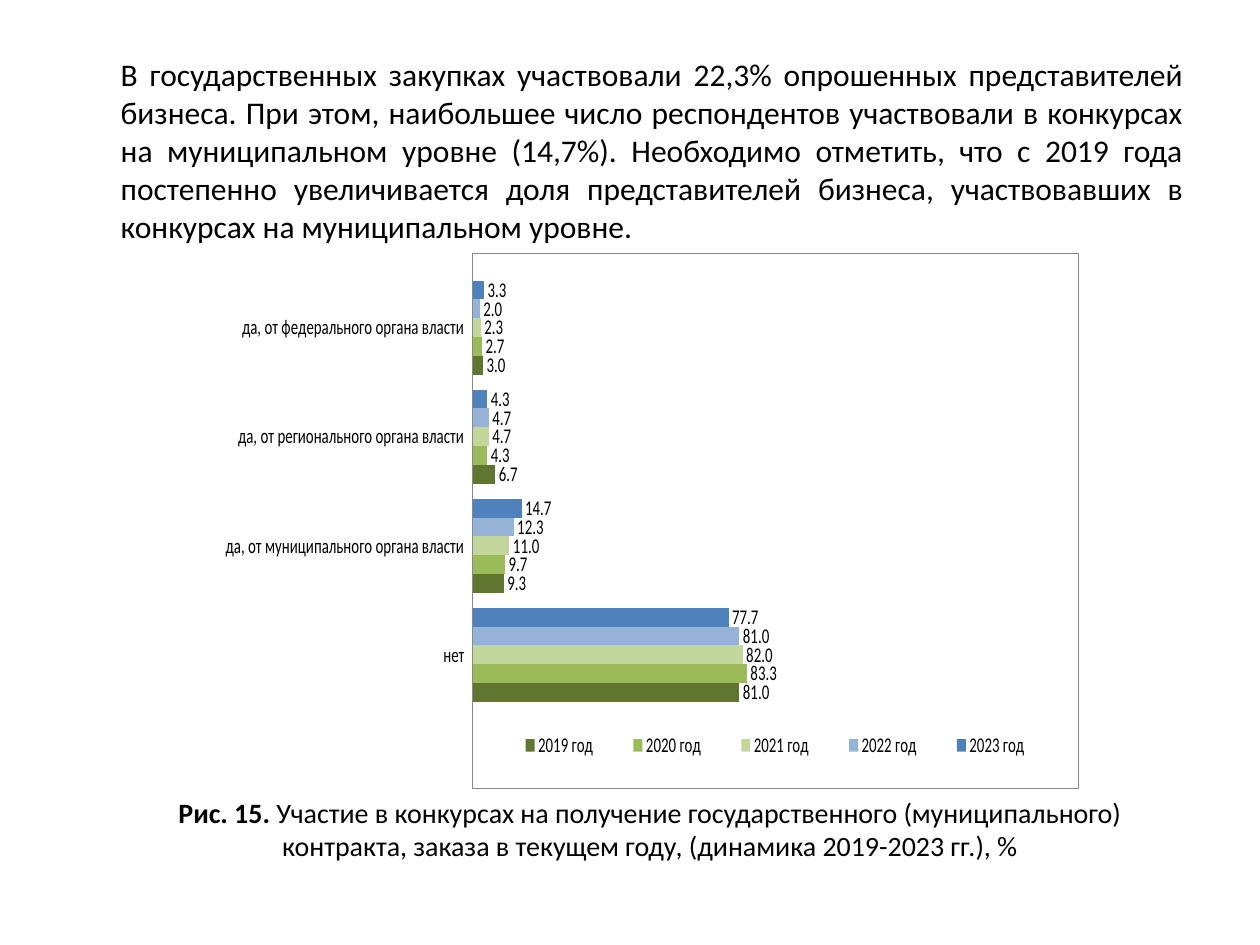
from typing import NamedTuple

from lxml.etree import Element, SubElement
from pptx import Presentation
from pptx.chart.data import CategoryChartData as Data
from pptx.dml.color import RGBColor as RGB
from pptx.enum.chart import XL_CHART_TYPE as Kind
from pptx.enum.chart import XL_LABEL_POSITION as Spot
from pptx.enum.chart import XL_LEGEND_POSITION as Side
from pptx.enum.chart import XL_TICK_MARK as Tick
from pptx.enum.text import MSO_ANCHOR as Anchor
from pptx.enum.text import MSO_AUTO_SIZE as Fit
from pptx.enum.text import PP_ALIGN as Align
from pptx.oxml import parse_xml
from pptx.oxml.ns import nsdecls, qn
from pptx.util import Pt

PX = 9144  # 100 px to the inch
FACE = "Calibri"
BLACK = "000000"


class Box(NamedTuple):
    x: int
    y: int
    w: int
    h: int

    def emu(self) -> list[int]:
        return [n * PX for n in self]


class Year(NamedTuple):
    name: str
    color: str
    vals: tuple


class Run(NamedTuple):
    text: str
    bold: bool = False


CATS = ("да, от федерального органа власти", "да, от регионального органа власти",
        "да, от муниципального органа власти", "нет")
YEARS = (
    Year("2023 год", "4F81BD", (3.3, 4.3, 14.7, 77.7)),
    Year("2022 год", "95B3D7", (2, 4.7, 12.3, 81)),
    Year("2021 год", "C3D69B", (2.3, 4.7, 11, 82)),
    Year("2020 год", "9BBB59", (2.7, 4.3, 9.7, 83.3)),
    Year("2019 год", "5F7530", (3, 6.7, 9.3, 81)),
)
INTRO = (Run(
    "В государственных закупках участвовали 22,3% опрошенных представителей бизнеса. "
    "При этом, наибольшее число респондентов участвовали в конкурсах на муниципальном "
    "уровне (14,7%). Необходимо отметить, что с 2019 года постепенно увеличивается доля "
    "представителей бизнеса, участвовавших в конкурсах на муниципальном уровне."),)
NOTE = (
    Run("Рис. 15. ", True),
    Run("Участие в конкурсах на получение государственного (муниципального) контракта, "
        "заказа в текущем году, (динамика 2019-2023 гг.), %"),
)


def rgb(code: str) -> RGB:
    return RGB.from_string(code)


def style(font, size: int) -> None:
    font.name, font.size = FACE, Pt(size)
    font.color.rgb = rgb(BLACK)


def add_text(slide, box: Box, runs: tuple, size: int, align, anchor) -> None:
    frame = slide.shapes.add_textbox(*box.emu()).text_frame
    frame.word_wrap = True
    frame.auto_size = Fit.SHAPE_TO_FIT_TEXT
    frame.vertical_anchor = anchor
    para = frame.paragraphs[0]
    para.alignment = align
    style(para.font, size)
    for item in runs:
        run = para.add_run()
        run.text = item.text
        if item.bold:
            run.font.bold = True


def layout(x: float, y: float, w: float, h: float, inner: bool = False):
    """Manual layout, as fractions of the chart."""
    root = Element(qn("c:layout"))
    part = SubElement(root, qn("c:manualLayout"))
    rows = [("layoutTarget", "inner")] if inner else []
    rows += [("xMode", "edge"), ("yMode", "edge"),
             ("x", x), ("y", y), ("w", w), ("h", h)]
    for tag, val in rows:
        SubElement(part, qn(f"c:{tag}")).set("val", str(val))
    return root


def add_bars(slide, box: Box) -> None:
    data = Data(number_format="0.0")
    data.categories = CATS
    for year in YEARS:
        data.add_series(year.name, year.vals)
    chart = slide.shapes.add_chart(Kind.BAR_CLUSTERED, *box.emu(), data).chart
    chart.has_title = False
    style(chart.font, 12)

    # Bars and their labels
    plot = chart.plots[0]
    plot.gap_width, plot.vary_by_categories = 80, False
    for year, bars in zip(YEARS, plot.series):
        bars.format.fill.solid()
        bars.format.fill.fore_color.rgb = rgb(year.color)
        tags = bars.data_labels
        tags.show_value = True
        tags.position = Spot.OUTSIDE_END
        tags.number_format, tags.number_format_is_linked = "0.0", False
        style(tags.font, 12)

    # Axes
    cat, val = chart.category_axis, chart.value_axis
    cat.reverse_order = True
    cat.major_tick_mark = Tick.OUTSIDE
    cat.format.line.fill.background()
    style(cat.tick_labels.font, 12)
    val.minimum_scale, val.maximum_scale = 0, 90
    val.has_major_gridlines = False
    val.visible = False

    # Legend
    chart.has_legend = True
    key = chart.legend
    key.position, key.include_in_layout = Side.BOTTOM, False
    style(key.font, 12)

    # Manual places and the frame
    root = chart.element
    root.xpath(".//c:legendPos")[0].addnext(layout(0.03, 0.88, 0.94, 0.08))
    area = root.xpath(".//c:plotArea")[0]
    for old in area.findall(qn("c:layout")):
        area.remove(old)
    area.insert(0, layout(0.002, 0.036, 0.488, 0.817, True))
    root.find(qn("c:chart")).addnext(parse_xml(
        f'<c:spPr {nsdecls("c", "a")}>'
        '<a:solidFill><a:srgbClr val="FFFFFF"/></a:solidFill>'
        '<a:ln w="9525"><a:solidFill><a:srgbClr val="888888"/></a:solidFill></a:ln>'
        '</c:spPr>'))


def main() -> None:
    deck = Presentation()
    deck.slide_width, deck.slide_height = 1000 * PX, 750 * PX
    slide = deck.slides.add_slide(deck.slide_layouts[6])
    add_text(slide, Box(86, 39, 863, 162), INTRO, 18, Align.JUSTIFY, Anchor.TOP)
    add_text(slide, Box(83, 626, 866, 64), NOTE, 16, Align.CENTER, Anchor.MIDDLE)
    add_bars(slide, Box(179, 201, 677, 425))
    deck.save("out.pptx")


if __name__ == "__main__":
    main()
